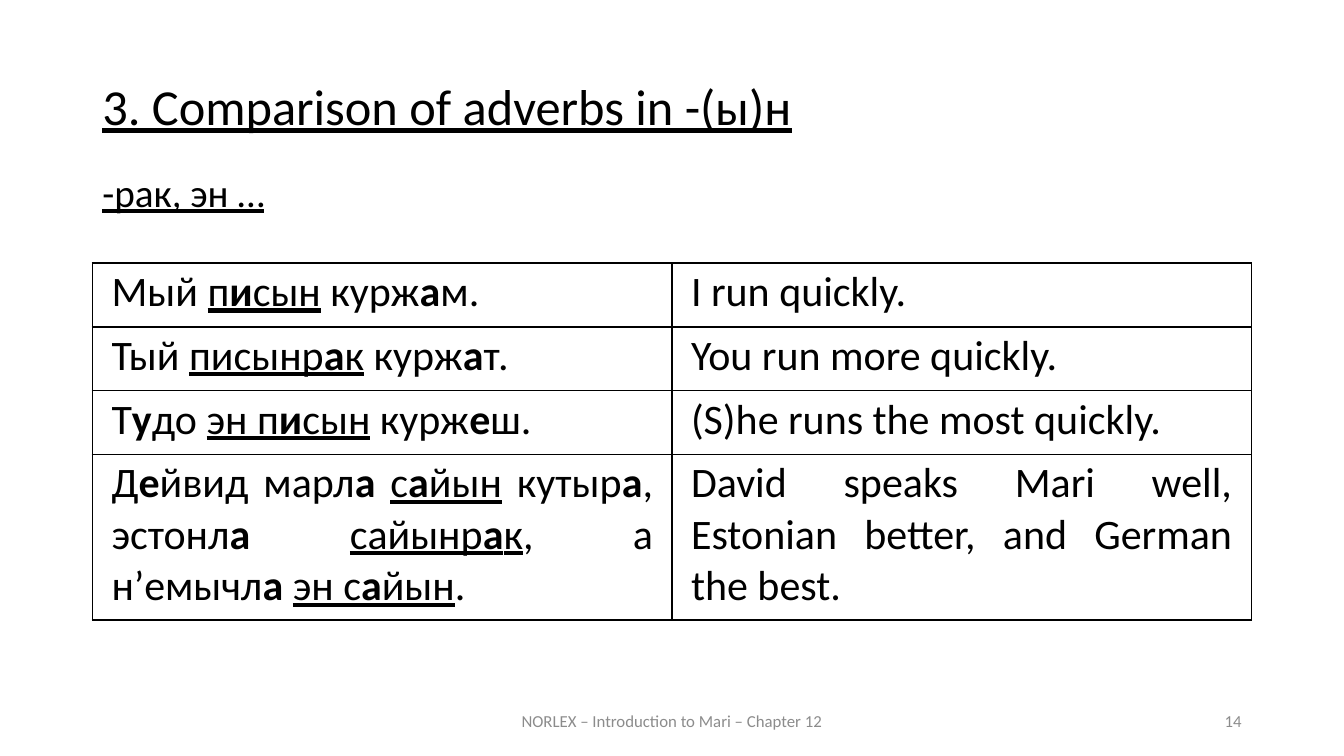
"""Build a slide on the comparison of Mari adverbs in -(ы)н."""
import dataclasses
import typing

import lxml.etree
import pptx
import pptx.dml.color
import pptx.enum.text
import pptx.oxml.ns
import pptx.util

Cm = pptx.util.Cm
Align = pptx.enum.text.PP_ALIGN
Anchor = pptx.enum.text.MSO_ANCHOR


@dataclasses.dataclass(frozen=True)
class Theme:
    font: str = "Calibri"
    ink: str = "000000"
    muted: str = "8C8C8C"
    heading: int = 36
    subheading: int = 28
    table: int = 30
    footer: int = 12
    outer_line: float = 1.5
    inner_line: float = 1


@dataclasses.dataclass(frozen=True)
class Label:
    text: str
    left: float
    top: float
    width: float
    height: float
    size: int
    color: str
    align: Align
    anchor: Anchor = Anchor.TOP
    line_spacing: float = 1.0
    space_before: int = 0


class Example(typing.NamedTuple):
    mari: str
    english: str
    height: float


THEME = Theme()
MARGIN, CONTENT_WIDTH = 2.33, 29.21
FOOTER_TOP, FOOTER_HEIGHT = 17.65, 1.01
TABLE_TOP = 6.63

LABELS = (
    Label("_3. Comparison of adverbs in -(ы)н_", MARGIN, 1.93, CONTENT_WIDTH, 2.11,
          THEME.heading, THEME.ink, Align.JUSTIFY, line_spacing=0.9, space_before=12),
    Label("NORLEX – Introduction to Mari – Chapter 12", 11.22, FOOTER_TOP, 11.43, FOOTER_HEIGHT,
          THEME.footer, THEME.muted, Align.CENTER, Anchor.MIDDLE),
    Label("14", 23.92, FOOTER_TOP, 7.62, FOOTER_HEIGHT,
          THEME.footer, THEME.muted, Align.RIGHT, Anchor.MIDDLE),
    Label("_-рак, эн …_", MARGIN, 4.24, CONTENT_WIDTH, 1.55,
          THEME.subheading, THEME.ink, Align.LEFT, line_spacing=0.9, space_before=10),
)

EXAMPLES = (
    Example("Мый _п*и*сын_ курж*а*м.", "I run quickly.", 1.61),
    Example("Тый _писынр*а*к_ курж*а*т.", "You run more quickly.", 1.61),
    Example("Т*у*до _эн п*и*сын_ курж*е*ш.", "(S)he runs the most quickly.", 1.61),
    Example("Д*е*йвид марл*а *_с*а*йын_ кутыр*а*, эстонл*а *_сайынр*а*к_, а н’емычл*а *_эн с*а*йын_.",
            "David speaks Mari well, Estonian better, and German the best.", 4.17),
)


def add_runs(paragraph: typing.Any, marked: str, size: int, color: str) -> None:
    """Add runs, with *bold* and _underlined_ passages marked in the text."""
    for part_index, part in enumerate(marked.split("_")):
        for piece_index, piece in enumerate(part.split("*")):
            if piece:
                run = paragraph.add_run()
                run.text = piece
                run.font.name = THEME.font
                run.font.size = pptx.util.Pt(size)
                run.font.color.rgb = pptx.dml.color.RGBColor.from_string(color)
                run.font.underline = part_index % 2 == 1
                run.font.bold = piece_index % 2 == 1


def add_label(slide: typing.Any, label: Label) -> None:
    """Add one text box to the slide."""
    shape = slide.shapes.add_textbox(
        Cm(label.left), Cm(label.top), Cm(label.width), Cm(label.height))
    frame = shape.text_frame
    frame.word_wrap = True
    frame.vertical_anchor = label.anchor
    paragraph = frame.paragraphs[0]
    paragraph.alignment = label.align
    paragraph.line_spacing = label.line_spacing
    paragraph.space_before = pptx.util.Pt(label.space_before)
    add_runs(paragraph, label.text, label.size, label.color)


def add_borders(cell: typing.Any, widths: dict[str, float]) -> None:
    """Draw solid cell borders with the given widths in points."""
    qn = pptx.oxml.ns.qn
    properties = cell._tc.get_or_add_tcPr()
    for side, width in widths.items():
        line = lxml.etree.SubElement(properties, qn(f"a:ln{side}"), w=str(pptx.util.Pt(width)))
        fill = lxml.etree.SubElement(line, qn("a:solidFill"))
        lxml.etree.SubElement(fill, qn("a:srgbClr"), val=THEME.ink)


def fill_cell(cell: typing.Any, text: str, is_first: bool, is_last: bool) -> None:
    """Format one table cell and write its text."""
    add_borders(cell, {
        "L": THEME.outer_line,
        "R": THEME.outer_line,
        "T": THEME.outer_line if is_first else THEME.inner_line,
        "B": THEME.outer_line if is_last else THEME.inner_line,
    })
    cell.fill.background()
    cell.margin_left = cell.margin_right = Cm(0.48)
    cell.margin_top, cell.margin_bottom = Cm(0.08), Cm(0)
    paragraph = cell.text_frame.paragraphs[0]
    paragraph.alignment = Align.JUSTIFY
    add_runs(paragraph, text, THEME.table, THEME.ink)


def add_examples(slide: typing.Any, examples: tuple[Example, ...]) -> None:
    """Add the table of Mari sentences and their translations."""
    height = sum(example.height for example in examples)
    table = slide.shapes.add_table(
        len(examples), 2, Cm(MARGIN), Cm(TABLE_TOP), Cm(CONTENT_WIDTH), Cm(height)).table
    table.first_row = table.horz_banding = False
    last = len(examples) - 1
    for row, example in enumerate(examples):
        table.rows[row].height = Cm(example.height)
        for column, text in enumerate((example.mari, example.english)):
            fill_cell(table.cell(row, column), text, row == 0, row == last)


def main() -> None:
    """Build and save the presentation."""
    presentation = pptx.Presentation()
    presentation.slide_width, presentation.slide_height = Cm(33.87), Cm(19.05)
    slide = presentation.slides.add_slide(presentation.slide_layouts[6])
    for label in LABELS:
        add_label(slide, label)
    add_examples(slide, EXAMPLES)
    presentation.save("out.pptx")


if __name__ == "__main__":
    main()
